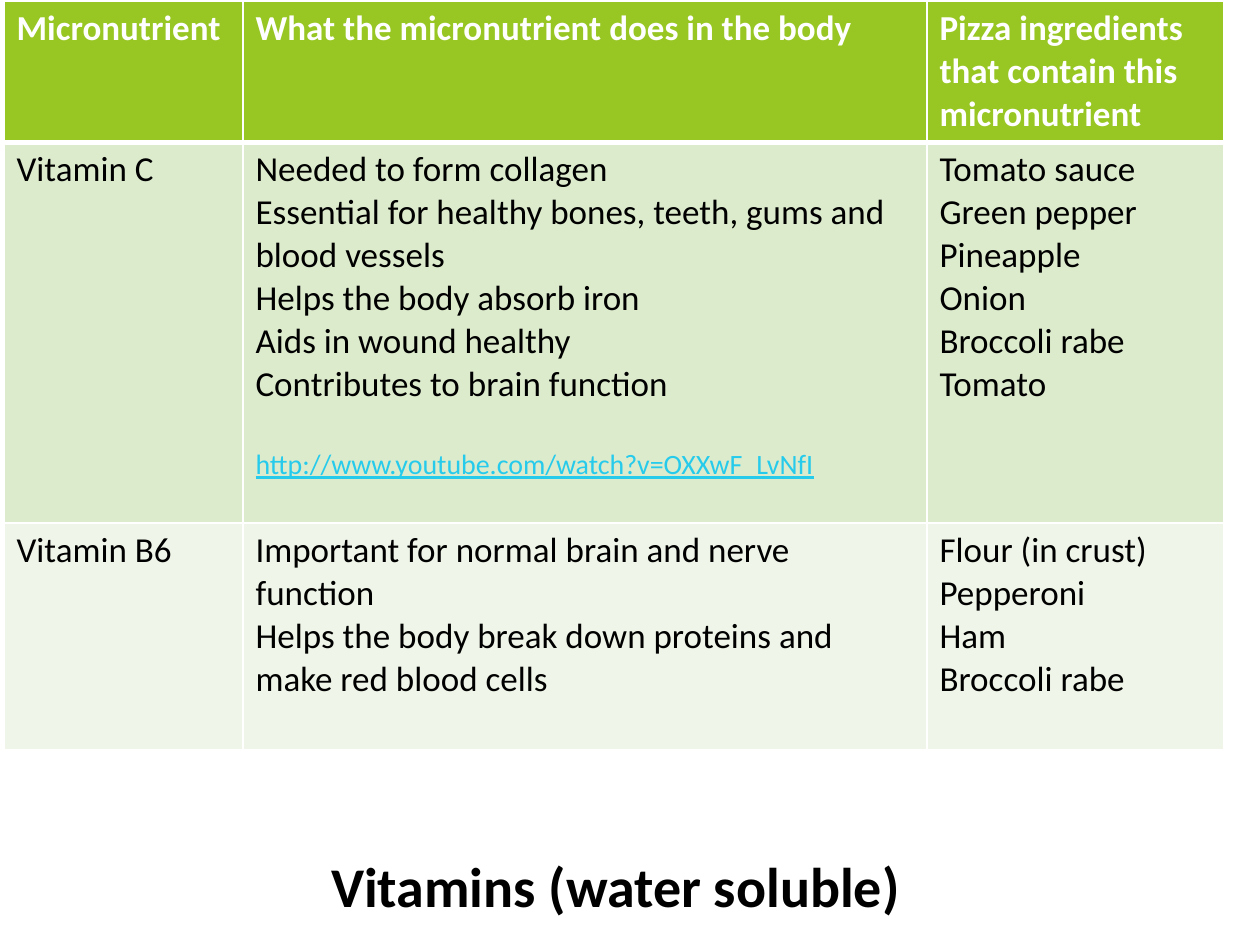
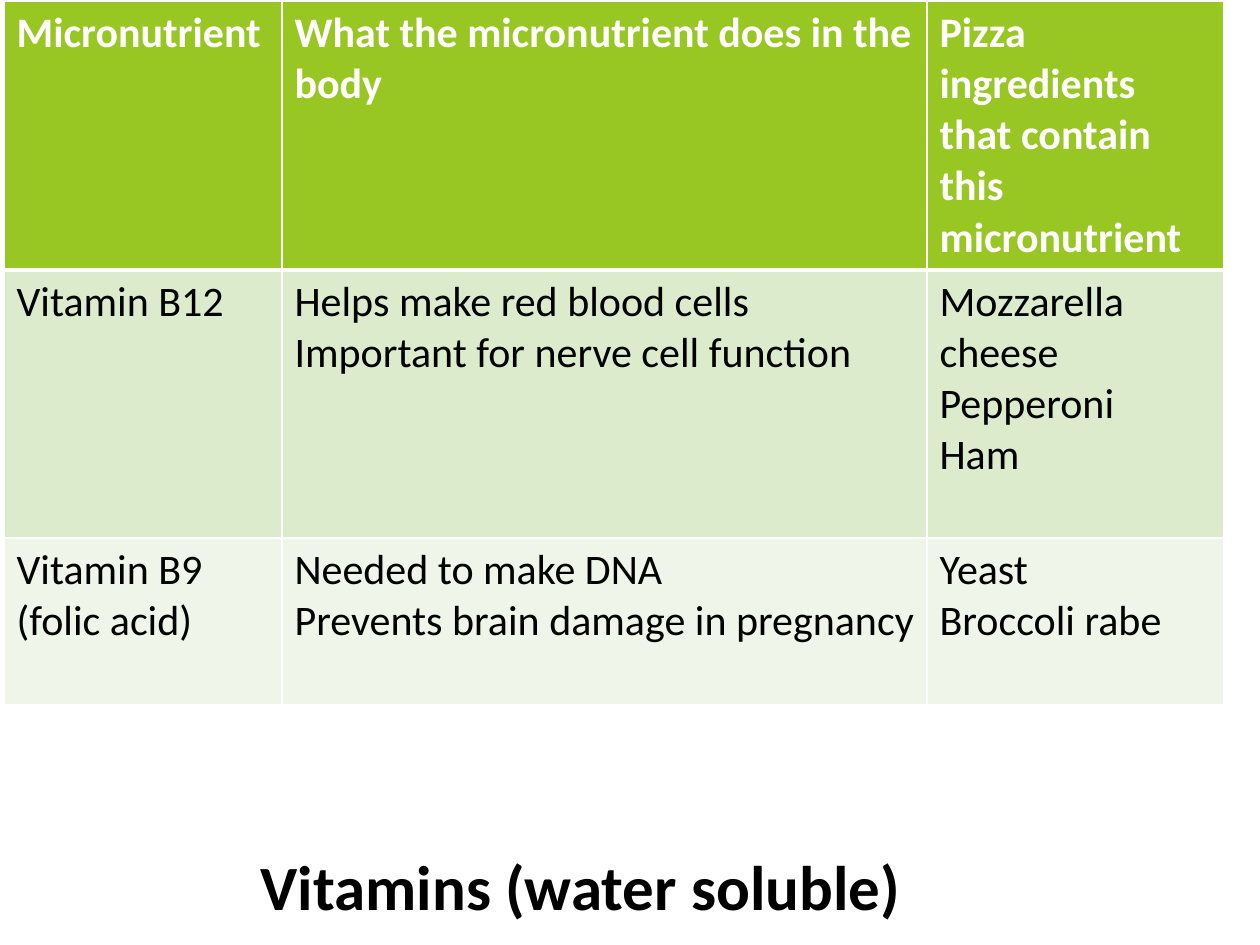
"""Build two table slides on water soluble vitamins."""
from lxml import etree
from pptx import Presentation
from pptx import util as u
from pptx.dml import color as clr
from pptx.enum import text
from pptx.oxml import ns

INK = {"head": "98C723", "odd": "DDEBCD", "even": "EFF5E8",
       "white": "FFFFFF", "black": "000000", "link": "26CBEC"}
FONT = "Calibri"
HEAD = ["Micronutrient", "What the micronutrient does in the body",
        "Pizza ingredients that contain this micronutrient"]
TITLE = "Vitamins (water soluble)"
TITLE_BOX = (154, 690, 759, 391)
GRID_SPOT = (4, 1)

SLIDES = [
    {"cols": [239, 684, 297], "rows": [141, 381, 227], "size": 20, "title": 32,
     "body": [
         ["Vitamin C",
          "Needed to form collagen\n"
          "Essential for healthy bones, teeth, gums and blood vessels\n"
          "Helps the body absorb iron\n"
          "Aids in wound healthy\n"
          "Contributes to brain function\n"
          "http://www.youtube.com/watch?v=OXXwF_LvNfI",
          "Tomato sauce\nGreen pepper\nPineapple\nOnion\nBroccoli rabe\nTomato"],
         ["Vitamin B6",
          "Important for normal brain and nerve function\n"
          "Helps the body break down proteins and make red blood cells",
          "Flour (in crust)\nPepperoni\nHam\nBroccoli rabe"]]},
    {"cols": [278, 645, 297], "rows": [269, 268, 167], "size": 24, "title": 36,
     "body": [
         ["Vitamin B12",
          "Helps make red blood cells\nImportant for nerve cell function",
          "Mozzarella cheese\nPepperoni\nHam"],
         ["Vitamin B9 (folic acid)",
          "Needed to make DNA\nPrevents brain damage in pregnancy",
          "Yeast\nBroccoli rabe"]]},
]


def px(num):
    """Turn pixels into EMU."""
    return u.Emu(round(num * 914400 / 126))


def rgb(name):
    """Look up a colour by name."""
    return clr.RGBColor.from_string(INK[name])


def style(para, size, ink, bold=False, line=False):
    """Format every run of a paragraph."""
    for run in para.runs:
        font = run.font
        font.name, font.size = FONT, u.Pt(size)
        font.bold, font.underline = bold, line
        font.color.rgb = rgb(ink)


def edge(cell, low):
    """Draw white cell borders, with the lower one of the given points."""
    props = cell._tc.get_or_add_tcPr()
    for spot, side in enumerate("LRTB"):
        wide = u.Pt(low if side == "B" else 1)
        line = etree.Element(ns.qn(f"a:ln{side}"), w=str(wide))
        fill = etree.SubElement(line, ns.qn("a:solidFill"))
        etree.SubElement(fill, ns.qn("a:srgbClr"), val=INK["white"])
        props.insert(spot, line)


def fill_cell(cell, words, size, row):
    """Write and colour one cell by the rule for its row."""
    top = row == 0
    cell.text_frame.text = words
    for para in cell.text_frame.paragraphs:
        if para.text.startswith("http"):
            para.space_before = u.Pt(24)
            style(para, 16, "link", line=True)
        else:
            style(para, size, "white" if top else "black", bold=top)
    cell.fill.solid()
    cell.fill.fore_color.rgb = rgb("head" if top else "odd" if row % 2 else "even")
    edge(cell, 3 if top else 1)


def add_grid(slide, spot, data):
    """Add the nutrient table with its corner at the given spot."""
    cols, rows = data["cols"], data["rows"]
    box = [px(n) for n in (*spot, sum(cols), sum(rows))]
    grid = slide.shapes.add_table(len(rows), len(cols), *box).table
    grid.first_row = grid.horz_banding = False
    for col, wide in zip(grid.columns, cols):
        col.width = px(wide)
    for row, tall in zip(grid.rows, rows):
        row.height = px(tall)
    for r, line in enumerate([HEAD] + data["body"]):
        for c, words in enumerate(line):
            fill_cell(grid.cell(r, c), words, data["size"], r)


def set_title(slide, box, size):
    """Place the slide title in the given box."""
    head = slide.shapes.title
    head.left, head.top, head.width, head.height = [px(n) for n in box]
    frame = head.text_frame
    frame.text = TITLE
    frame.word_wrap = True
    frame.vertical_anchor = text.MSO_ANCHOR.MIDDLE
    para = frame.paragraphs[0]
    para.alignment = text.PP_ALIGN.RIGHT
    style(para, size, "black", bold=True)


def main():
    """Build and save the slides."""
    deck = Presentation()
    deck.slide_width, deck.slide_height = px(1260), px(945)
    for data in SLIDES:
        slide = deck.slides.add_slide(deck.slide_layouts[5])
        add_grid(slide, GRID_SPOT, data)
        set_title(slide, TITLE_BOX, data["title"])
    deck.save("out.pptx")


if __name__ == "__main__":
    main()
